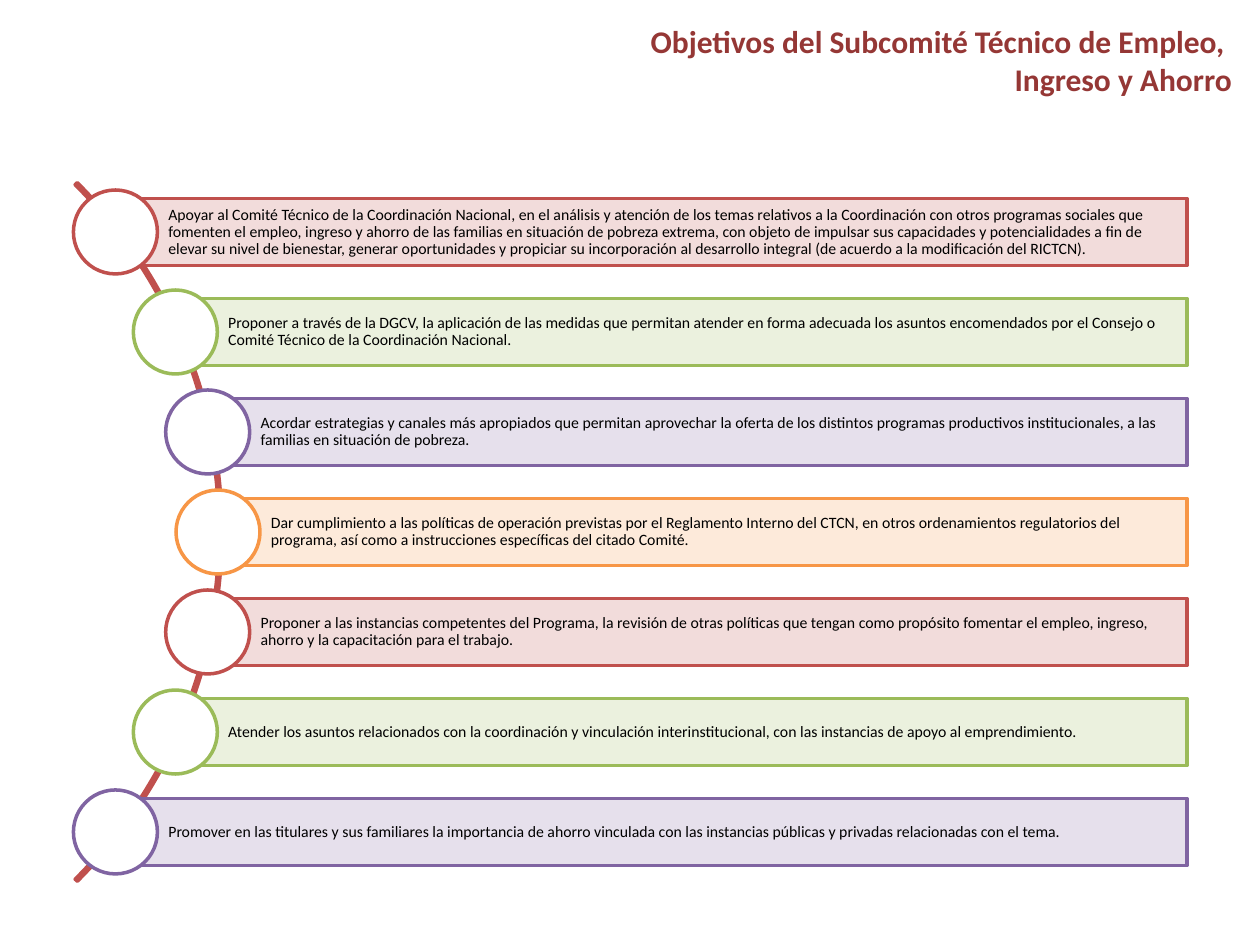
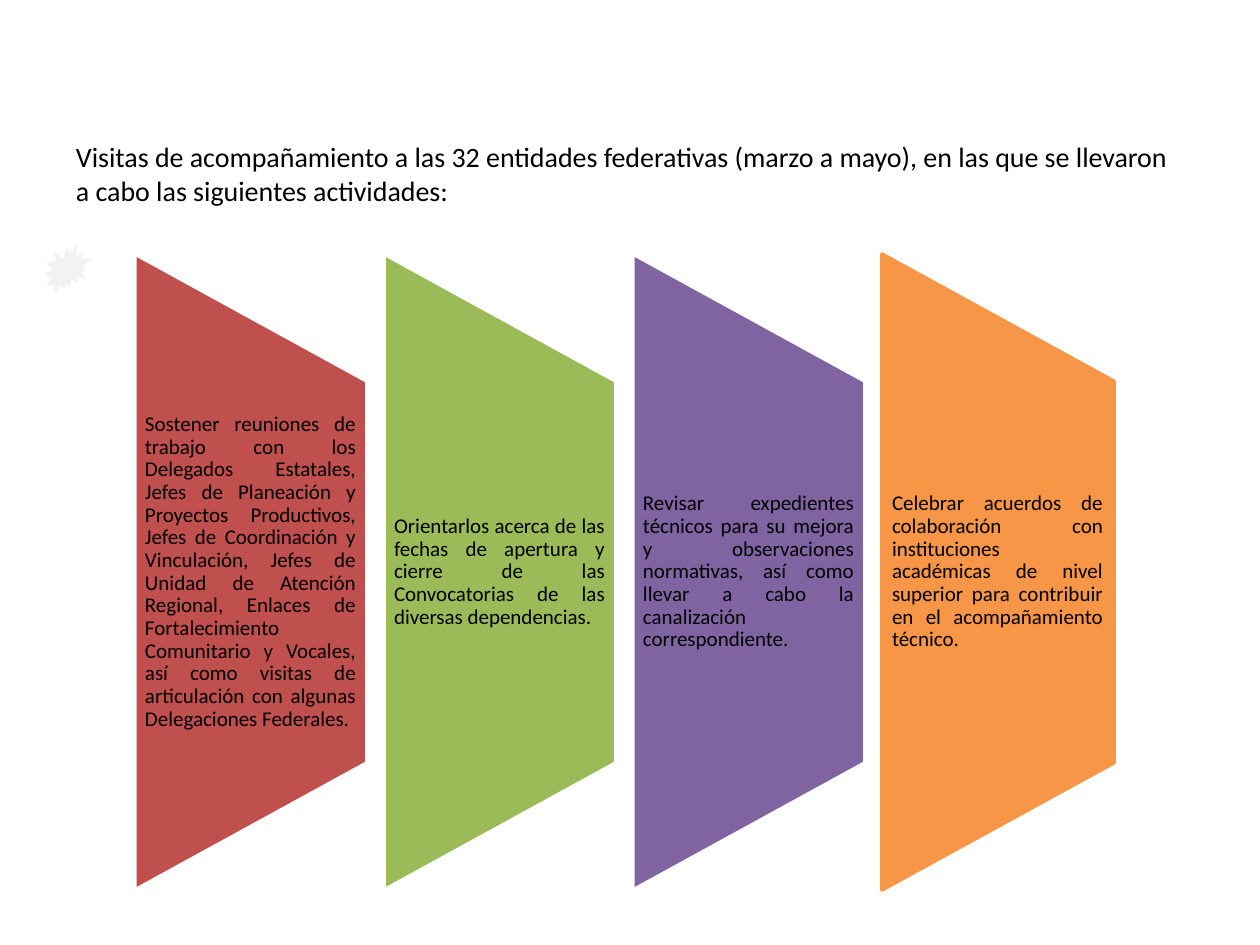
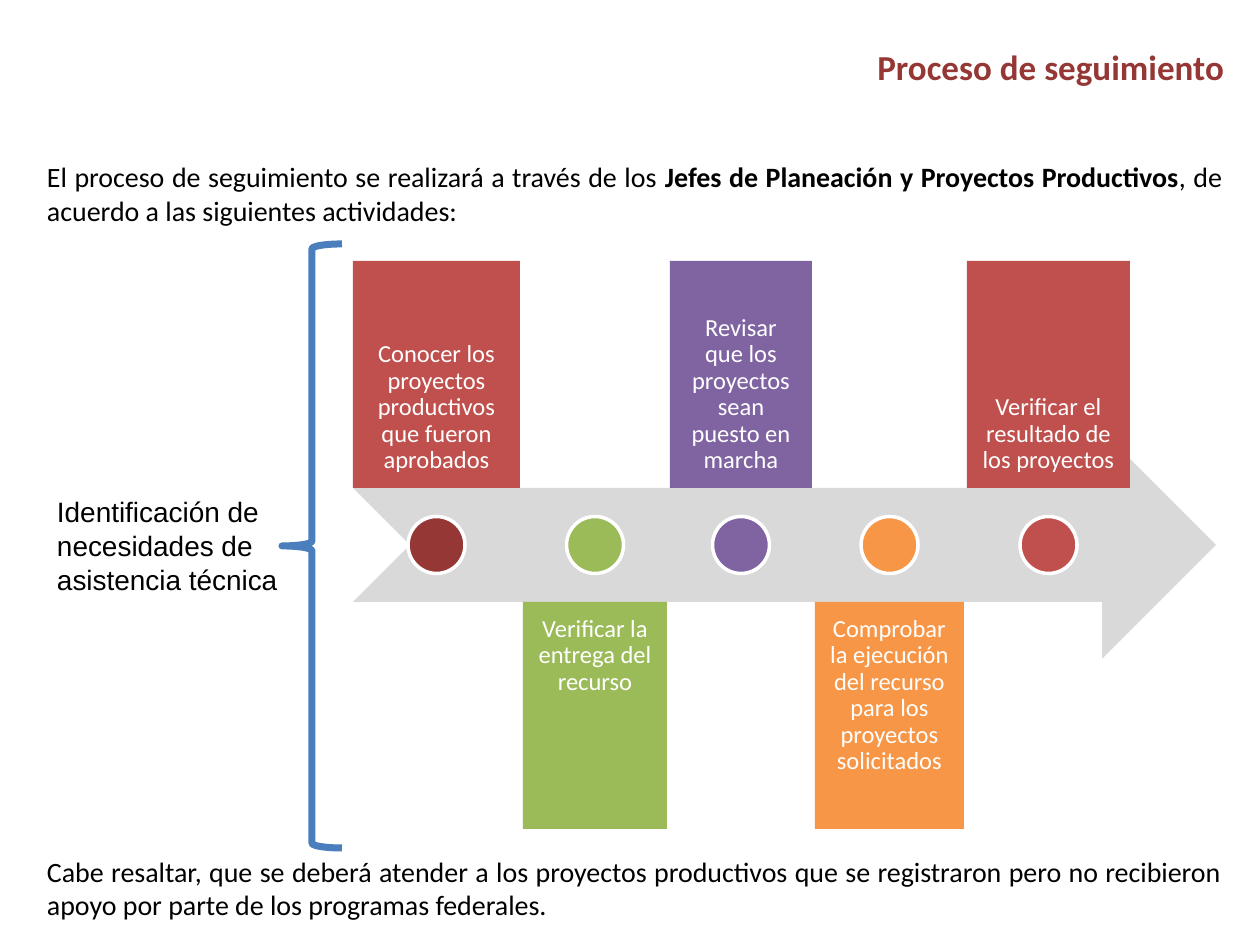
"""Build three slides on the employment, income and savings subcommittee."""
import dataclasses
import math

import pptx
import pptx.dml.color
import pptx.enum.shapes
import pptx.enum.text
import pptx.util

SHAPE = pptx.enum.shapes.MSO_SHAPE
ALIGN = pptx.enum.text.PP_ALIGN
ANCHOR = pptx.enum.text.MSO_ANCHOR
EMU_PER_PX = 914400 / 126


@dataclasses.dataclass(frozen=True)
class Theme:
    """Colours, fonts and type sizes shared by the slides."""
    red: str = "C0504D"
    green: str = "9BBB59"
    purple: str = "8064A2"
    orange: str = "F79646"
    dark_red: str = "953735"
    blue: str = "4B7EBC"
    white: str = "FFFFFF"
    black: str = "000000"
    arrow_grey: str = "D9D9D9"
    seal_grey: str = "F2F2F2"
    pale_red: str = "F2DCDB"
    pale_green: str = "EBF1DE"
    pale_purple: str = "E6E0EC"
    pale_orange: str = "FDEADA"
    font: str = "Calibri"
    label_font: str = "Arial"
    objective_size: int = 9
    activity_size: int = 12
    step_size: int = 14
    body_size: int = 16
    long_title_size: int = 18
    title_size: int = 20
    outline: int = 2
    brace_line: int = 4


THEME = Theme()

OBJECTIVES = [
    "Apoyar al Comité Técnico de la Coordinación Nacional, en el análisis y atención de los temas "
    "relativos a la Coordinación con otros programas sociales que fomenten el empleo, ingreso y "
    "ahorro de las familias en situación de pobreza extrema, con objeto de impulsar sus capacidades "
    "y potencialidades a fin de elevar su nivel de bienestar, generar oportunidades y propiciar su "
    "incorporación al desarrollo integral (de acuerdo a la modificación del RICTCN).",
    "Proponer a través de la DGCV, la aplicación de las medidas que permitan atender en forma "
    "adecuada los asuntos encomendados por el Consejo o Comité Técnico de la Coordinación Nacional.",
    "Acordar estrategias y canales más apropiados que permitan aprovechar la oferta de los "
    "distintos programas productivos institucionales, a las familias en situación de pobreza.",
    "Dar cumplimiento a las políticas de operación previstas por el Reglamento Interno del CTCN, en "
    "otros ordenamientos regulatorios del programa, así como a instrucciones específicas del citado "
    "Comité.",
    "Proponer a las instancias competentes del Programa, la revisión de otras políticas que tengan "
    "como propósito fomentar el empleo, ingreso, ahorro y la capacitación para el trabajo.",
    "Atender los asuntos relacionados con la coordinación y vinculación interinstitucional, con las "
    "instancias de apoyo al emprendimiento.",
    "Promover en las titulares y sus familiares la importancia de ahorro vinculada con las "
    "instancias públicas y privadas relacionadas con el tema.",
]

OBJECTIVE_COLOURS = [
    (THEME.red, THEME.pale_red),
    (THEME.green, THEME.pale_green),
    (THEME.purple, THEME.pale_purple),
    (THEME.orange, THEME.pale_orange),
]

ACTIVITIES = [
    ("Sostener reuniones de trabajo con los Delegados Estatales, Jefes de Planeación y Proyectos "
     "Productivos, Jefes de Coordinación y Vinculación, Jefes de Unidad de Atención Regional, "
     "Enlaces de Fortalecimiento Comunitario y Vocales, así como visitas de articulación con "
     "algunas Delegaciones Federales.", THEME.red, THEME.white),
    ("Orientarlos acerca de las fechas de apertura y cierre de las Convocatorias de las diversas "
     "dependencias.", THEME.green, THEME.white),
    ("Revisar expedientes técnicos para su mejora y observaciones normativas, así como llevar a "
     "cabo la canalización correspondiente.", THEME.purple, THEME.white),
    ("Celebrar acuerdos de colaboración con instituciones académicas de nivel superior para "
     "contribuir en el acompañamiento técnico.", THEME.orange, THEME.orange),
]

STEPS = [
    ("Conocer los proyectos productivos que fueron aprobados", 167, THEME.red, THEME.dark_red),
    ("Verificar la entrega del recurso", 144, THEME.green, THEME.green),
    ("Revisar que los proyectos sean puesto en marcha", 142, THEME.purple, THEME.purple),
    ("Comprobar la ejecución del recurso para los proyectos solicitados", 149, THEME.orange,
     THEME.orange),
    ("Verificar el resultado de los proyectos", 163, THEME.red, THEME.red),
]


def px(length):
    """Turn pixels into EMU."""
    return pptx.util.Emu(round(length * EMU_PER_PX))


def rgb(colour):
    """Turn a hex string into a colour."""
    return pptx.dml.color.RGBColor.from_string(colour)


def add_page(deck):
    """Add a blank slide."""
    return deck.slides.add_slide(deck.slide_layouts[6])


def add_figure(page, kind, bounds, fill=None, line=None, weight=THEME.outline):
    """Add a preset shape with a flat fill and an optional outline."""
    figure = page.shapes.add_shape(kind, *map(px, bounds))
    figure.shadow.inherit = False
    if fill:
        figure.fill.solid()
        figure.fill.fore_color.rgb = rgb(fill)
    else:
        figure.fill.background()
    if line:
        figure.line.color.rgb = rgb(line)
        figure.line.width = pptx.util.Pt(weight)
    else:
        figure.line.fill.background()
    return figure


def write(box, text, size, colour=THEME.black, font=THEME.font, align=ALIGN.LEFT, anchor=ANCHOR.TOP,
          insets=(13, 6, 13, 6), spacing=1.0, bold=False, emphasis=""):
    """Fill a shape with formatted text, with one phrase optionally in bold."""
    frame = box.text_frame
    frame.word_wrap = True
    frame.vertical_anchor = anchor
    frame.margin_left, frame.margin_top, frame.margin_right, frame.margin_bottom = map(px, insets)
    frame.text = text
    for para in frame.paragraphs:
        para.alignment = align
        para.line_spacing = spacing
        if emphasis:
            pieces = para.text.partition(emphasis)
            para.clear()
            for piece in pieces:
                para.add_run().text = piece
        for span in para.runs:
            span.font.name = font
            span.font.size = pptx.util.Pt(size)
            span.font.bold = bold or span.text == emphasis
            span.font.color.rgb = rgb(colour)


def add_text(page, bounds, text, size=THEME.body_size, **style):
    """Add a text box."""
    write(page.shapes.add_textbox(*map(px, bounds)), text, size, **style)


def add_title(page, bounds, text, size):
    """Add a right-aligned slide title."""
    add_text(page, bounds, text, size, colour=THEME.dark_red, align=ALIGN.RIGHT, bold=True)


def add_circle(page, centre_x, centre_y, diameter, fill, line):
    """Add a circle around a centre."""
    bounds = (centre_x - diameter / 2, centre_y - diameter / 2, diameter, diameter)
    add_figure(page, SHAPE.OVAL, bounds, fill, line)


def add_objective(page, centre_x, centre_y, text, line, fill):
    """Add an objective bar with its circle on the left end."""
    right, height = 1187, 67
    bounds = (centre_x, centre_y - height / 2, right - centre_x, height)
    bar = add_figure(page, SHAPE.RECTANGLE, bounds, fill, line)
    write(bar, text, THEME.objective_size, anchor=ANCHOR.MIDDLE, insets=(53, 4, 4, 4), spacing=0.9)
    add_circle(page, centre_x, centre_y, 84, THEME.white, line)


def add_activity(page, centre_x, text, fill, line):
    """Add an upright trapezoid and its justified text."""
    length, width, centre_y, text_height = 636, 232, 572, 380
    bounds = (centre_x - length / 2, centre_y - width / 2, length, width)
    panel = add_figure(page, SHAPE.FLOWCHART_MANUAL_OPERATION, bounds, fill, line)
    panel.rotation = 270
    add_text(page, (centre_x - width / 2, centre_y - text_height / 2, width, text_height), text,
             THEME.activity_size, align=ALIGN.JUSTIFY, anchor=ANCHOR.MIDDLE,
             insets=(10, 0, 11, 0), spacing=0.9)


def add_step(page, left, width, above, text, fill, dot):
    """Add a step card above or below the arrow, with its dot on the arrow."""
    card = add_figure(page, SHAPE.RECTANGLE, (left, 261 if above else 602, width, 227), fill)
    write(card, text, THEME.step_size, THEME.white, align=ALIGN.CENTER,
          anchor=ANCHOR.BOTTOM if above else ANCHOR.TOP, insets=(14, 14, 14, 14), spacing=0.9)
    add_circle(page, left + width / 2, 545, 57, dot, THEME.white)


def build_objectives(deck):
    """Build the slide of objectives along an arc."""
    page = add_page(deck)
    arc_x, arc_y, radius, pitch = -272, 532, 494, 100
    arc = add_figure(page, SHAPE.BLOCK_ARC,
                     (arc_x - radius, arc_y - radius, 2 * radius, 2 * radius), line=THEME.red)
    for index, value in enumerate((189, 27, 0.003)):
        arc.adjustments[index] = value
    for index, text in enumerate(OBJECTIVES):
        rise = (index - len(OBJECTIVES) // 2) * pitch
        centre_x = arc_x + math.sqrt(490 ** 2 - rise ** 2)
        line, fill = OBJECTIVE_COLOURS[index % len(OBJECTIVE_COLOURS)]
        add_objective(page, centre_x, arc_y + rise, text, line, fill)
    add_title(page, (421, 16, 824, 89),
              "Objetivos del Subcomité Técnico de Empleo, \nIngreso y Ahorro", THEME.long_title_size)


def build_visits(deck):
    """Build the slide of visit activities."""
    page = add_page(deck)
    add_text(page, (63, 134, 1131, 81),
             "Visitas de acompañamiento a las 32 entidades federativas (marzo a mayo), en las que se "
             "llevaron a cabo las siguientes actividades:")
    for index, activity in enumerate(ACTIVITIES):
        add_activity(page, 251 + 249 * index, *activity)
    add_figure(page, SHAPE.EXPLOSION2, (44, 244, 49, 49), THEME.seal_grey)


def build_follow_up(deck):
    """Build the slide of the follow-up process."""
    page = add_page(deck)
    add_title(page, (413, 39, 824, 55), "Proceso de seguimiento", THEME.title_size)
    add_figure(page, SHAPE.NOTCHED_RIGHT_ARROW, (353, 431, 863, 228), THEME.arrow_grey)
    left, gap = 353, 3
    for index, (text, width, fill, dot) in enumerate(STEPS):
        add_step(page, left, width, index % 2 == 0, text, fill, dot)
        left += width + gap
    add_text(page, (34, 154, 1201, 81),
             "El proceso de seguimiento se realizará a través de los Jefes de Planeación y Proyectos "
             "Productivos, de acuerdo a las siguientes actividades:",
             align=ALIGN.JUSTIFY, emphasis="Jefes de Planeación y Proyectos Productivos")
    add_text(page, (34, 848, 1201, 81),
             "Cabe resaltar, que se deberá atender a los proyectos productivos que se registraron "
             "pero no recibieron apoyo por parte de los programas federales.", align=ALIGN.JUSTIFY)
    brace = add_figure(page, SHAPE.LEFT_BRACE, (282, 244, 60, 604), line=THEME.blue,
                       weight=THEME.brace_line)
    brace.adjustments[0] = 0.08
    brace.adjustments[1] = 0.5
    add_text(page, (44, 489, 248, 115), "Identificación de necesidades de asistencia técnica",
             font=THEME.label_font)


def main():
    """Build and save the deck."""
    deck = pptx.Presentation()
    deck.slide_width, deck.slide_height = px(1260), px(945)
    build_objectives(deck)
    build_visits(deck)
    build_follow_up(deck)
    deck.save("out.pptx")


if __name__ == "__main__":
    main()
